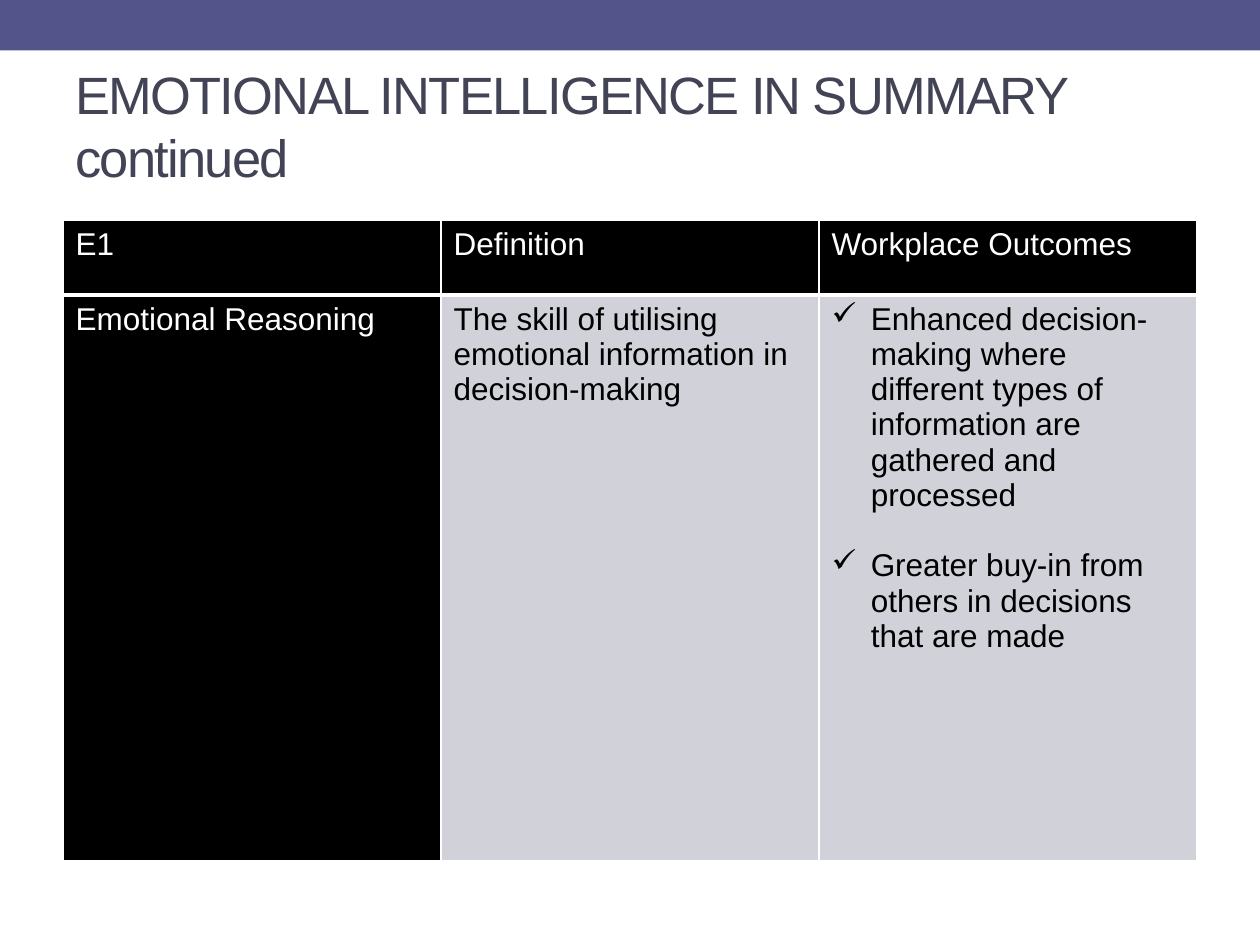
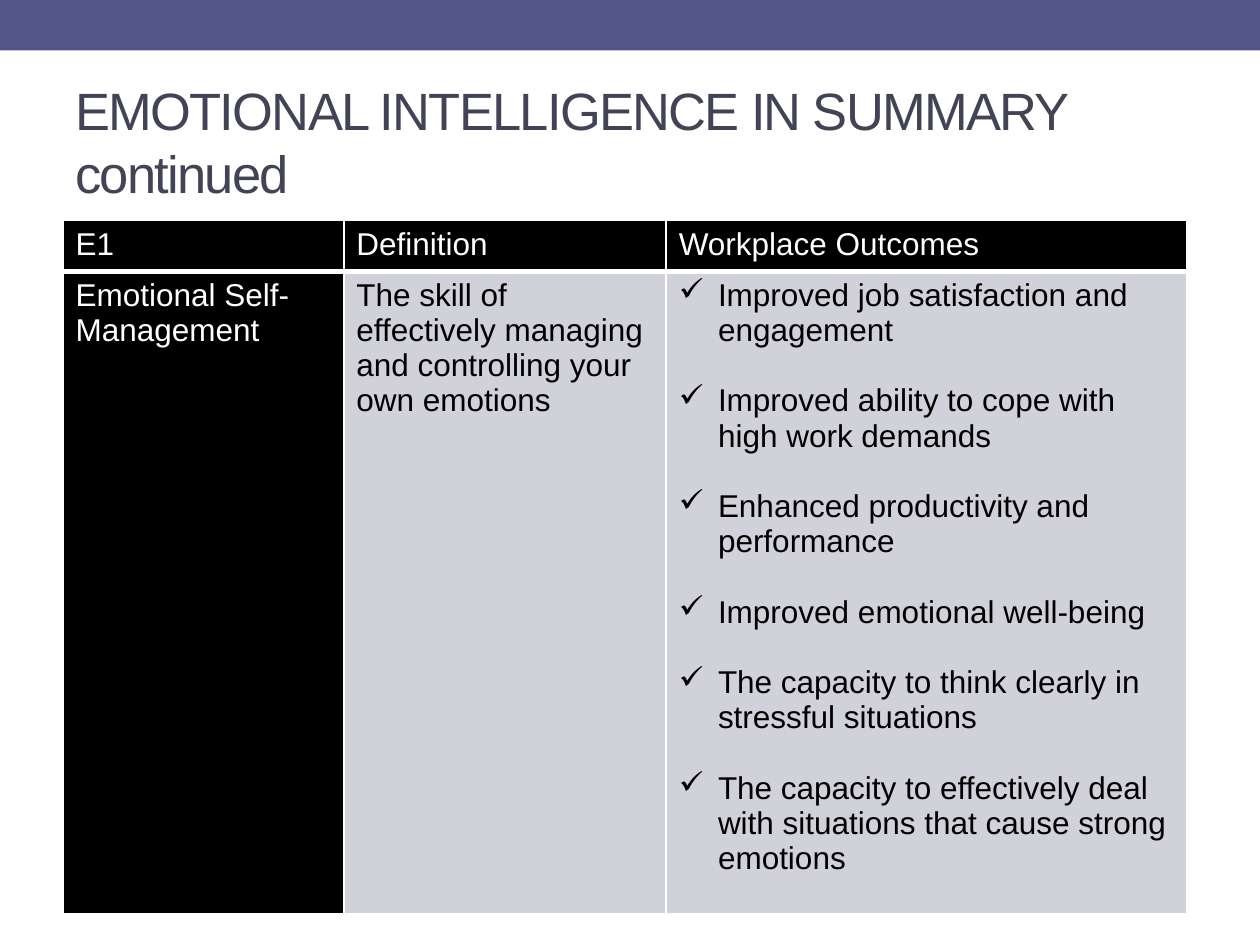
import pptx
import pptx.dml.color
import pptx.enum.shapes
import pptx.enum.text
import pptx.oxml
import pptx.oxml.ns
import pptx.util
from lxml import etree
from pptx.util import Cm

FONT = "Arial"
BAND = "53548A"
TITLE = "424456"
DARK = "000000"
LIGHT = "FFFFFF"
BODY = "D1D1DA"
HEADINGS = ["E1", "Definition", "Workplace Outcomes"]
HEADING = "EMOTIONAL INTELLIGENCE IN SUMMARY continued"


def color(value):
    return pptx.dml.color.RGBColor.from_string(value)


def add_child(parent, tag, **attributes):
    return etree.SubElement(parent, pptx.oxml.ns.qn(tag), **attributes)


class SummaryDeck:
    def __init__(self):
        self.presentation = pptx.Presentation()
        self.presentation.slide_width = Cm(25.4)
        self.presentation.slide_height = Cm(19.05)
        self.slide = None

    def add_slide(self, title_height):
        self.slide = self.presentation.slides.add_slide(self.presentation.slide_layouts[6])
        self.add_band()
        self.add_title(title_height)

    def add_band(self):
        band = self.slide.shapes.add_shape(
            pptx.enum.shapes.MSO_SHAPE.RECTANGLE, 0, 0, self.presentation.slide_width, Cm(1.02))
        band.shadow.inherit = False
        band.fill.solid()
        band.fill.fore_color.rgb = color(BAND)
        band.line.fill.background()

    def style(self, paragraph, size, text_color):
        paragraph.font.name = FONT
        paragraph.font.size = pptx.util.Pt(size)
        paragraph.font.bold = False
        paragraph.font.color.rgb = color(text_color)

    def add_title(self, height):
        box = self.slide.shapes.add_textbox(Cm(1.27), Cm(1.47), Cm(22.86), Cm(height))
        frame = box.text_frame
        frame.word_wrap = True
        frame.vertical_anchor = pptx.enum.text.MSO_ANCHOR.MIDDLE
        paragraph = frame.paragraphs[0]
        run = paragraph.add_run()
        run.text = HEADING
        self.style(paragraph, 30, TITLE)
        run.font._element.set("spc", "-100")

    def add_table(self, column_widths, row_heights, skill, definition, outcomes):
        table = self.slide.shapes.add_table(
            2, 3, Cm(1.27), Cm(4.45), Cm(sum(column_widths)), Cm(sum(row_heights))).table
        for column, width in zip(table.columns, column_widths):
            column.width = Cm(width)
        for row, height in zip(table.rows, row_heights):
            row.height = Cm(height)
        for index, heading in enumerate(HEADINGS):
            self.fill_cell(table.cell(0, index), [heading], DARK, LIGHT, bottom=3)
        self.fill_cell(table.cell(1, 0), [skill], DARK, LIGHT, top=3)
        self.fill_cell(table.cell(1, 1), [definition], BODY, DARK, top=3)
        self.fill_cell(table.cell(1, 2), outcomes, BODY, DARK, top=3, checked=True)

    def fill_cell(self, cell, texts, fill, text_color, top=1, bottom=1, checked=False):
        self.add_borders(cell, top, bottom)
        cell.fill.solid()
        cell.fill.fore_color.rgb = color(fill)
        frame = cell.text_frame
        for index, text in enumerate(texts):
            paragraph = frame.add_paragraph() if index else frame.paragraphs[0]
            paragraph.text = text
            self.style(paragraph, 18, text_color)
            if index:
                paragraph.space_before = pptx.util.Pt(20.1)
            if checked:
                self.add_check(paragraph)

    def add_borders(self, cell, top, bottom):
        properties = cell._tc.get_or_add_tcPr()
        for side, width in (("L", 1), ("R", 1), ("T", top), ("B", bottom)):
            line = add_child(properties, f"a:ln{side}", w=str(pptx.util.Pt(width)))
            add_child(add_child(line, "a:solidFill"), "a:srgbClr", val=LIGHT)

    def add_check(self, paragraph):
        properties = paragraph._p.get_or_add_pPr()
        indent = Cm(0.79)
        properties.set("marL", str(indent))
        properties.set("indent", str(-indent))
        bullet = pptx.oxml.parse_xml(f'<a:buChar {pptx.oxml.ns.nsdecls("a")} char="✓"/>')
        properties.insert_element_before(bullet, "a:tabLst", "a:defRPr", "a:extLst")


def main():
    deck = SummaryDeck()
    deck.add_slide(2.11)
    deck.add_table(
        [7.62] * 3, [1.5, 11.4], "Emotional Reasoning",
        "The skill of utilising emotional information in decision-making",
        ["Enhanced decision-making where different types of information are gathered and processed",
         "Greater buy-in from others in decisions that are made"])
    deck.add_slide(2.74)
    deck.add_table(
        [5.66, 6.5, 10.49], [0.97, 12.57], "Emotional Self-Management",
        "The skill of effectively managing and controlling your own emotions",
        ["Improved job satisfaction and engagement",
         "Improved ability to cope with high work demands",
         "Enhanced productivity and performance",
         "Improved emotional well-being",
         "The capacity to think clearly in stressful situations",
         "The capacity to effectively deal with situations that cause strong emotions"])
    deck.presentation.save("out.pptx")


if __name__ == "__main__":
    main()
